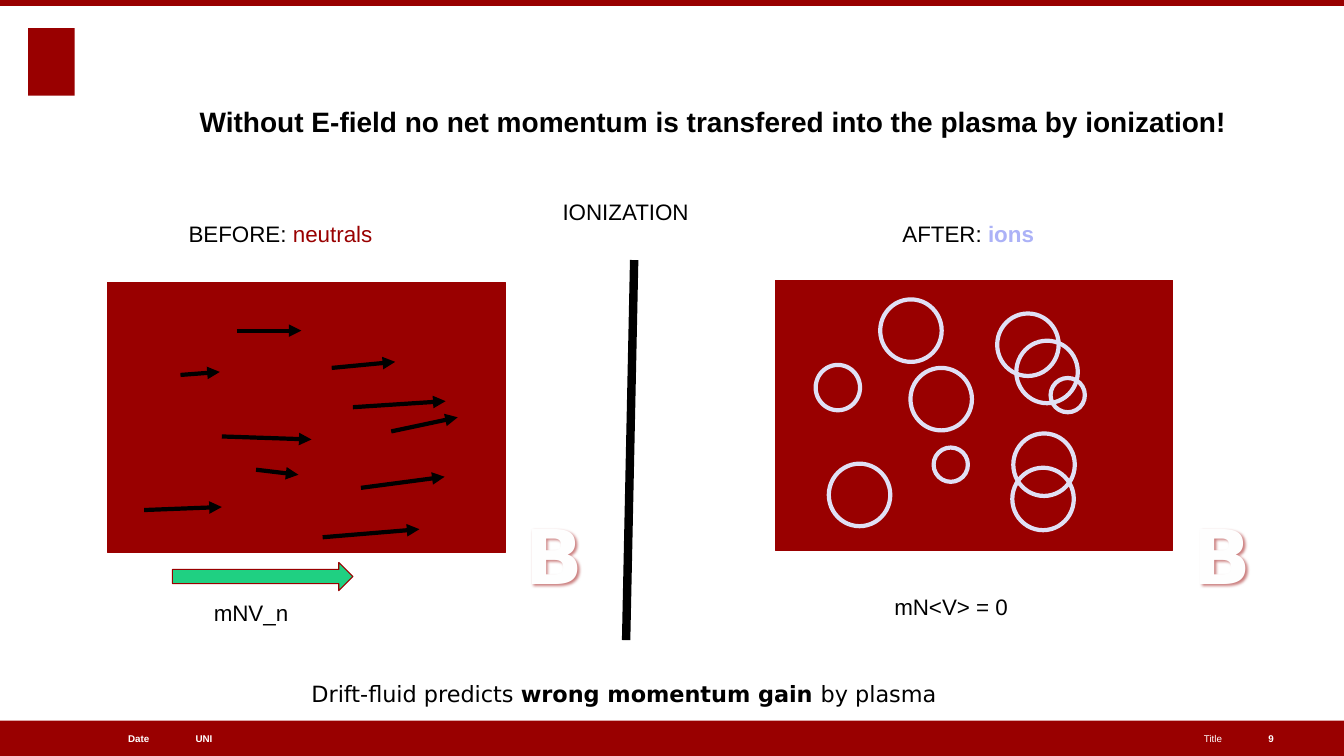
import pptx
import pptx.util
import pptx.dml.color
import pptx.enum.shapes
import pptx.enum.text
import pptx.oxml.ns
import lxml.etree

Inches, Pt = pptx.util.Inches, pptx.util.Pt
SHAPE = pptx.enum.shapes.MSO_SHAPE
ALIGN = pptx.enum.text.PP_ALIGN
ANCHOR = pptx.enum.text.MSO_ANCHOR
COLORS = {
    "red": "990000", "black": "000000", "white": "FFFFFF", "letter": "FEFEFE",
    "ion": "ACB2F7", "ion_edge": "2F3EEA", "orbit": "E0E0F5", "green": "1FD082",
}


def rgb(name):
    return pptx.dml.color.RGBColor.from_string(COLORS[name])


def add_xml(parent, tag, **attributes):
    return lxml.etree.SubElement(parent, pptx.oxml.ns.qn(tag), attributes)


class SlideBuilder:
    font = "Arial"
    size = 16

    def __init__(self, slide):
        self.slide = slide

    def shape(self, kind, left, top, width, height, fill=None, line=None, weight=0.75):
        item = self.slide.shapes.add_shape(
            kind, Inches(left), Inches(top), Inches(width), Inches(height))
        item.shadow.inherit = False
        if fill:
            item.fill.solid()
            item.fill.fore_color.rgb = rgb(fill)
        else:
            item.fill.background()
        if line:
            item.line.color.rgb = rgb(line)
            item.line.width = Pt(weight)
        else:
            item.line.fill.background()

    def line(self, start, end, weight=3, arrow=True):
        item = self.slide.shapes.add_connector(
            pptx.enum.shapes.MSO_CONNECTOR.STRAIGHT, *map(Inches, start + end))
        item.line.color.rgb = rgb("black")
        item.line.width = Pt(weight)
        if arrow:
            add_xml(item.line._get_or_add_ln(), "a:tailEnd", type="triangle")
        add_xml(item._element.spPr, "a:effectLst")

    def text(self, left, top, width, height, *runs, size=None, font=None, align=ALIGN.LEFT,
             anchor=ANCHOR.TOP, wrap=False, inset=(0, 0), before=4.3):
        """Each run is (wording, colour, bold) and may end with (outline colour, points)."""
        box = self.slide.shapes.add_textbox(
            Inches(left), Inches(top), Inches(width), Inches(height))
        frame = box.text_frame
        frame.word_wrap = wrap
        frame.vertical_anchor = anchor
        frame.margin_left = frame.margin_right = Inches(inset[0])
        frame.margin_top = frame.margin_bottom = Inches(inset[1])
        paragraph = frame.paragraphs[0]
        paragraph.alignment = align
        paragraph.space_before = Pt(before)
        for wording, color, bold, *outline in runs:
            run = paragraph.add_run()
            run.text = wording
            run.font.name = font or self.font
            run.font.size = Pt(size or self.size)
            run.font.bold = bold
            run.font.color.rgb = rgb(color)
            if outline:
                self.outline(run, *outline[0])
        return box

    def outline(self, run, color, weight):
        properties = run.font._element
        edge = add_xml(properties, "a:ln", w=str(Pt(weight)))
        add_xml(add_xml(edge, "a:solidFill"), "a:srgbClr", val=COLORS[color])
        properties.insert(0, edge)

    def glow_shadow(self, box, color, blur, distance, alpha):
        effects = add_xml(box._element.spPr, "a:effectLst")
        shadow = add_xml(effects, "a:outerShdw", blurRad=str(Pt(blur)),
                         dist=str(Pt(distance)), dir="2700000", algn="tl", rotWithShape="0")
        tone = add_xml(shadow, "a:srgbClr", val=COLORS[color])
        add_xml(tone, "a:alpha", val=str(alpha * 1000))

    def footer(self, left, width, wording, bold=True, align=ALIGN.LEFT):
        self.text(left, 7.15, width, 0.35, (wording, "white", bold), size=7,
                  align=align, anchor=ANCHOR.MIDDLE, wrap=True, before=0)


def main():
    deck = pptx.Presentation()
    deck.slide_width, deck.slide_height = Inches(13.33), Inches(7.5)
    page = SlideBuilder(deck.slides.add_slide(deck.slide_layouts[6]))

    # Page frame, emblem block and footer
    page.shape(SHAPE.RECTANGLE, 0.28, 0.28, 0.46, 0.67, "red")
    page.shape(SHAPE.RECTANGLE, 0, 7.15, 13.33, 0.35, "red")
    page.shape(SHAPE.RECTANGLE, 0, 0, 13.33, 0.06, "red")
    page.footer(1.94, 3.72, "UNI")
    page.footer(0.27, 1.21, "Date", align=ALIGN.RIGHT)
    page.footer(6.11, 6.01, "Title", bold=False, align=ALIGN.RIGHT)
    page.footer(12.58, 0.47, "9")

    # Headline
    page.text(1.98, 1.04, 10.25, 0.34,
              ("Without E-field no net momentum is transfered into the plasma by ionization!",
               "black", True), size=20)

    # Plasma before and after, each in a magnetic field
    for plasma_left, plasma_top, field_left in ((1.07, 2.8, 5.1), (7.69, 2.78, 11.73)):
        page.shape(SHAPE.RECTANGLE, plasma_left, plasma_top, 3.94, 2.68, "red", "red")
        field = page.text(
            field_left, 5, 0.79, 1.01, ("B", "letter", True, ("red", 0.75)), size=54,
            font="DejaVu Sans", align=ALIGN.CENTER, inset=(0.1, 0.05), before=0)
        page.glow_shadow(field, "red", blur=2, distance=1.5, alpha=50)

    # Labels
    page.text(1.87, 2.18, 1.91, 0.27,
              ("BEFORE: ", "black", False), ("neutrals", "red", False))
    page.text(8.95, 2.18, 1.38, 0.27,
              ("AFTER: ", "black", False), ("ions", "ion", True, ("ion_edge", 1.75)))
    for left, top, width, wording in (
            (5.58, 1.97, 1.27, "IONIZATION"),
            (2.12, 5.94, 0.81, "mNV_n"),
            (8.87, 5.88, 1.14, "mN<V> = 0")):
        page.text(left, top, width, 0.27, (wording, "black", False))

    # Velocities of the neutrals
    for start, end in (
            ((1.79, 3.72), (2.18, 3.69)), ((2.35, 3.28), (2.99, 3.28)),
            ((3.5, 4.04), (4.42, 3.98)), ((2.2, 4.33), (3.09, 4.36)),
            ((1.43, 5.06), (2.2, 5.03)), ((2.54, 4.66), (2.96, 4.71)),
            ((3.88, 4.28), (4.54, 4.14)), ((3.58, 4.84), (4.41, 4.73)),
            ((3.29, 3.65), (3.92, 3.59)), ((3.2, 5.33), (4.16, 5.25))):
        page.line(start, end)

    # Divider and net momentum
    page.line((6.29, 2.58), (6.21, 6.35), weight=6, arrow=False)
    page.shape(SHAPE.RIGHT_ARROW, 1.71, 5.58, 1.79, 0.28, "green", "red")

    # Gyrating ions
    large, medium, small = (0.61, 0.62), (0.44, 0.45), (0.34, 0.34)
    for left, top, orbit in (
            (8.73, 2.97, large), (8.09, 3.62, medium), (9.03, 3.65, large),
            (9.26, 4.44, small), (8.22, 4.6, large), (10.04, 4.64, large),
            (9.89, 3.11, large), (10.42, 3.75, small), (10.08, 3.38, large),
            (10.05, 4.3, large)):
        page.shape(SHAPE.OVAL, left, top, *orbit, line="orbit", weight=3)

    # Conclusion
    page.text(2.99, 6.7, 7.29, 0.37, ("Drift-fluid predicts ", "black", False),
              ("wrong momentum gain ", "black", True), ("by plasma", "black", False),
              font="DejaVu Sans", wrap=True, inset=(0.1, 0.05))

    deck.save("out.pptx")


if __name__ == "__main__":
    main()
